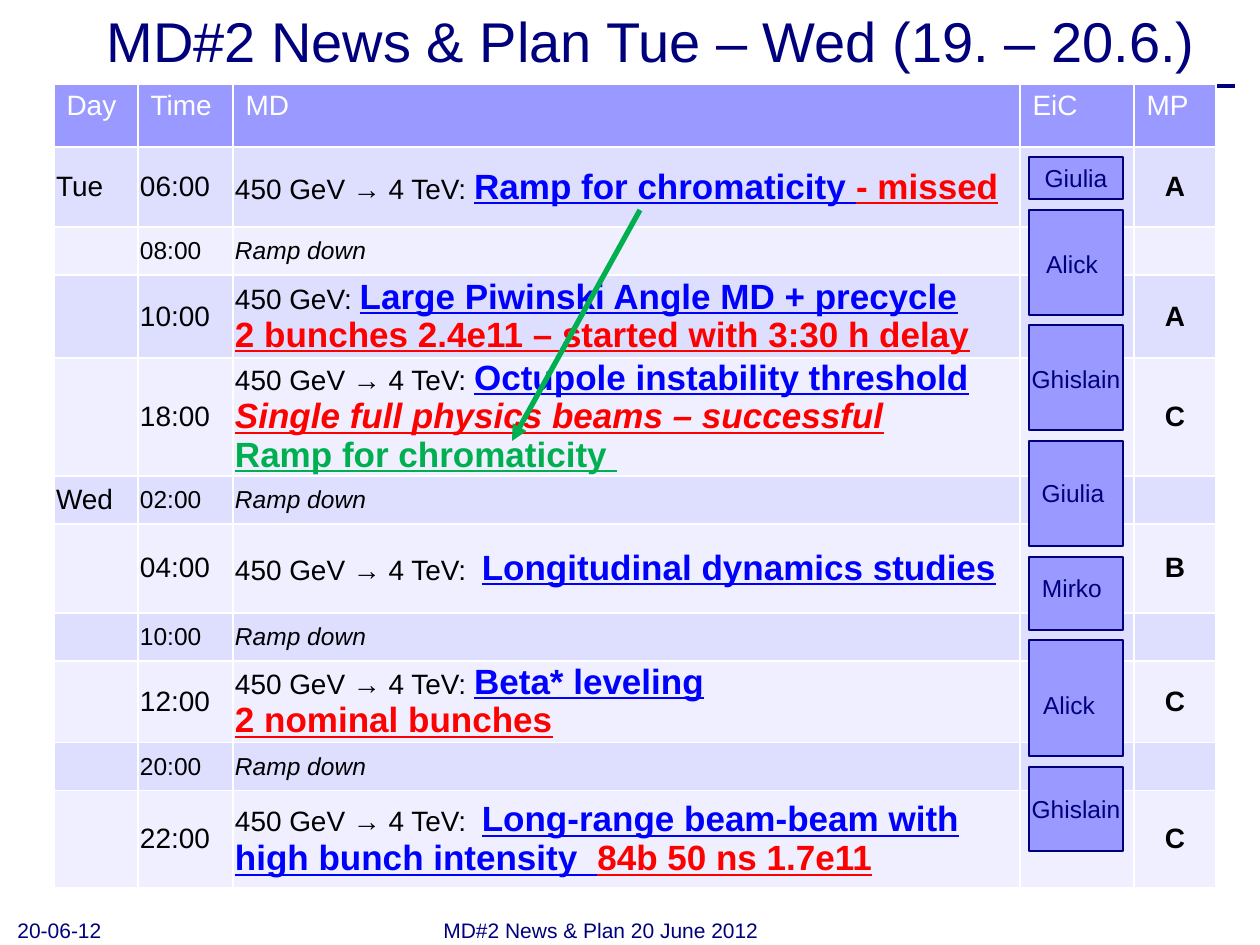
"""Builds the schedule slide for the MD#2 plan, Tuesday to Wednesday."""
from lxml.etree import SubElement
from pptx import Presentation
from pptx.dml.color import RGBColor
from pptx.enum.shapes import MSO_CONNECTOR, MSO_SHAPE
from pptx.enum.text import MSO_ANCHOR, PP_ALIGN
from pptx.oxml.ns import qn
from pptx.util import Pt

PX = 914400 // 126
NAVY, LILAC, WHITE, BLACK = "00007D", "9999FF", "FFFFFF", "000000"
BLUE, RED, GREEN = "0000FF", "FF0000", "00B050"


def paint(font, size, color, bold=False, italic=False):
    font.name, font.size = "Arial", Pt(size)
    font.bold, font.italic = bold, italic
    font.underline = color in (BLUE, RED, GREEN)
    font.color.rgb = RGBColor.from_string(color)


def label(text, left, top, width, height, size, anchor, align=PP_ALIGN.LEFT):
    box = slide.shapes.add_textbox(left * PX, top * PX, width * PX, height * PX)
    frame = box.text_frame
    frame.word_wrap, frame.vertical_anchor = True, anchor
    frame.text = text
    frame.paragraphs[0].alignment = align
    paint(frame.paragraphs[0].runs[0].font, size, NAVY)


deck = Presentation()
deck.slide_width, deck.slide_height = 1260 * PX, 945 * PX
slide = deck.slides.add_slide(deck.slide_layouts[6])

lines = []
for x1, y1, x2, y2, color, width in [(94, 86, 1235, 86, NAVY, 2), (640, 210, 512, 441, GREEN, 3)]:
    line = slide.shapes.add_connector(MSO_CONNECTOR.STRAIGHT, x1 * PX, y1 * PX, x2 * PX, y2 * PX)
    line.line.color.rgb = RGBColor.from_string(color)
    line.line.width = Pt(width)
    SubElement(line._element.spPr, qn("a:effectLst"))
    lines.append(line)
arrow = lines[1]
SubElement(arrow.line._get_or_add_ln(), qn("a:tailEnd"), type="triangle")

label("MD#2 News & Plan Tue – Wed (19. – 20.6.)", 94, 4, 1134, 72, 32, MSO_ANCHOR.MIDDLE)

RAMP = "450 GeV → 4 TeV: "
DOWN = [[("Ramp down", BLACK)]]
plan = [
    (80, "Tue", "06:00", [[(RAMP, BLACK), ("Ramp for chromaticity ", BLUE), ("- missed", RED)]], "A"),
    (48, "", "08:00", DOWN, ""),
    (83, "", "10:00", [[("450 GeV: ", BLACK), ("Large Piwinski Angle MD + precycle", BLUE)],
                       [("2 bunches 2.4e11 – started with 3:30 h delay", RED)]], "A"),
    (118, "", "18:00", [[(RAMP, BLACK), ("Octupole instability threshold", BLUE)],
                        [("Single full physics beams – successful", RED)],
                        [("Ramp for chromaticity ", GREEN)]], "C"),
    (48, "Wed", "02:00", DOWN, ""),
    (89, "", "04:00", [[(RAMP + " ", BLACK), ("Longitudinal dynamics studies", BLUE)]], "B"),
    (48, "", "10:00", DOWN, ""),
    (82, "", "12:00", [[(RAMP, BLACK), ("Beta* leveling", BLUE)], [("2 nominal bunches", RED)]], "C"),
    (48, "", "20:00", DOWN, ""),
    (97, "", "22:00", [[(RAMP + " ", BLACK), ("Long-range beam-beam with high bunch intensity  ", BLUE),
                        ("84b 50 ns 1.7e11", RED)]], "C"),
]
widths = [84, 95, 787, 114, 82]
heights = [63] + [row[0] for row in plan]
grid = slide.shapes.add_table(len(heights), len(widths), 54 * PX, 84 * PX,
                              sum(widths) * PX, sum(heights) * PX).table
for col, width in zip(grid.columns, widths):
    col.width = width * PX
for row, height in zip(grid.rows, heights):
    row.height = height * PX

for r, row in enumerate(grid.rows):
    for c, cell in enumerate(row.cells):
        props = cell._tc.get_or_add_tcPr()
        for side in ("lnL", "lnR", "lnT", "lnB"):
            edge = SubElement(props, qn("a:" + side), w=str(Pt(1)))
            SubElement(SubElement(edge, qn("a:solidFill")), qn("a:srgbClr"), val=WHITE)
        cell.fill.solid()
        shade = LILAC if r == 0 else ("EFEFFF", "DEDEFF")[r % 2]
        cell.fill.fore_color.rgb = RGBColor.from_string(shade)
        if r == 0:
            cell.text_frame.text = ("Day", "Time", "MD", "EiC", "MP")[c]
            paint(cell.text_frame.paragraphs[0].runs[0].font, 16, WHITE)
            continue
        cell.vertical_anchor = MSO_ANCHOR.MIDDLE
        cell.margin_left = cell.margin_right = 2 * PX
        cell.margin_top = cell.margin_bottom = 0
        _, day, time, tasks, mark = plan[r - 1]
        rest = tasks is DOWN
        paras = ([[(day, BLACK)]], [[(time, BLACK)]], tasks, [], [[(mark, BLACK)]])[c]
        for i, parts in enumerate(paras):
            para = cell.text_frame.paragraphs[0] if i == 0 else cell.text_frame.add_paragraph()
            para.alignment = PP_ALIGN.CENTER if c == 4 else PP_ALIGN.LEFT
            if len(paras) > 1:
                para.line_spacing = Pt(22)
            for text, color in filter(lambda part: part[0], parts):
                run = para.add_run()
                run.text = text
                size = 20 if color != BLACK else 14 if rest and c in (1, 2) else 16
                slant = (rest and c == 2) or text.startswith("Single")
                paint(run.font, size, color, color != BLACK or c == 4, slant)

shifts = [
    ("Giulia", 157, 42, 1076, 157),
    ("Alick", 210, 105, 1072, 243),
    ("Ghislain", 325, 105, 1076, 358),
    ("Giulia", 441, 105, 1073, 472),
    ("Mirko", 557, 73, 1072, 567),
    ("Alick", 640, 116, 1069, 684),
    ("Ghislain", 767, 84, 1076, 788),
]
for name, top, height, mid, head in shifts:
    block = slide.shapes.add_shape(MSO_SHAPE.RECTANGLE, 1029 * PX, top * PX, 94 * PX, height * PX)
    block.shadow.inherit = False
    block.fill.solid()
    block.fill.fore_color.rgb = RGBColor.from_string(LILAC)
    block.line.color.rgb = RGBColor.from_string(NAVY)
    block.line.width = Pt(1)
    label(name, mid - 60, head, 120, 43, 14, MSO_ANCHOR.TOP, PP_ALIGN.CENTER)

slide.shapes._spTree.append(arrow._element)
label("MD#2 News & Plan 20 June 2012", 431, 914, 399, 35, 12, MSO_ANCHOR.BOTTOM)
label("20-06-12", 5, 912, 294, 37, 12, MSO_ANCHOR.BOTTOM)
deck.save("out.pptx")
